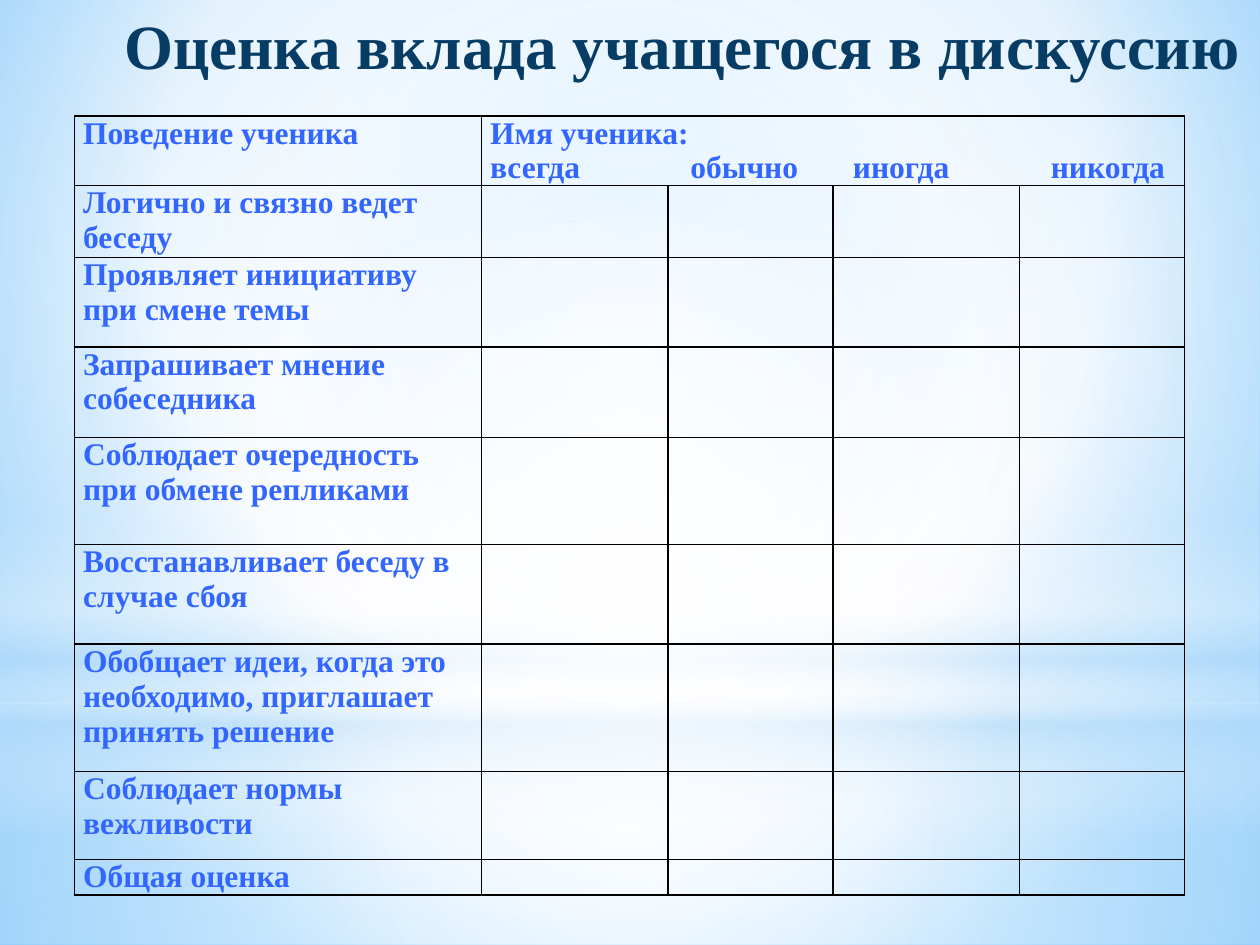
import pptx
import pptx.dml.color
import pptx.enum.shapes
import pptx.enum.text
import pptx.oxml.ns
import pptx.util
from lxml import etree

Inches = pptx.util.Inches
qn = pptx.oxml.ns.qn
MSO_SHAPE = pptx.enum.shapes.MSO_SHAPE
FONT = "Times New Roman"
CENTRE = (50, 50, 50, 50)
COLS = [3.23, 1.48, 1.31, 1.48, 1.31]
ROWS = [0.55, 0.57, 0.71, 0.72, 0.85, 0.79, 1.01, 0.7, 0.28]
RATING_TABS = [1.59, 2.88, 4.45]
RATINGS = ["всегда", "обычно", "иногда", "никогда"]
BEHAVIOURS = [
    "Поведение ученика",
    "Логично и связно ведет беседу",
    "Проявляет инициативу при смене темы",
    "Запрашивает мнение собеседника",
    "Соблюдает очередность при обмене репликами",
    "Восстанавливает беседу в случае сбоя",
    "Обобщает идеи, когда это необходимо, приглашает принять решение",
    "Соблюдает нормы вежливости",
    "Общая оценка",
]


def rgb(color):
    return pptx.dml.color.RGBColor.from_string(color)


def sub(parent, tag, **attrs):
    return etree.SubElement(parent, qn(tag), {k: str(v) for k, v in attrs.items()})


def write(p, text, size=18, color="3366FF", bold=True, align=None):
    p.alignment = align
    r = p.add_run()
    r.text = text
    r.font.name = FONT
    r.font.size = pptx.util.Pt(size)
    r.font.bold = bold
    r.font.color.rgb = rgb(color)


def set_gradient(fill, root, stops, to=None, angle=None):
    fill.gradient()
    grad = root.find(".//" + qn("a:gradFill"))
    for child in list(grad):
        grad.remove(child)
    gs_lst = sub(grad, "a:gsLst")
    for pos, color, opacity in stops:
        gs = sub(gs_lst, "a:gs", pos=pos * 1000)
        clr = sub(gs, "a:srgbClr", val=color)
        if opacity < 100:
            sub(clr, "a:alpha", val=opacity * 1000)
    if to:
        rect = {side: v * 1000 for side, v in zip("ltrb", to)}
        sub(sub(grad, "a:path", path="circle"), "a:fillToRect", **rect)
    else:
        sub(grad, "a:lin", ang=angle * 60000, scaled=0)


def add_glow(s, kind, top, height, stops, **direction):
    sp = s.shapes.add_shape(kind, 0, Inches(top), Inches(10), Inches(height))
    sp.shadow.inherit = False
    sp.line.fill.background()
    set_gradient(sp.fill, sp._element.spPr, stops, **direction)


def add_background(s):
    set_gradient(s.background.fill, s._element,
                 [(0, "9ED5FF", 100), (60, "FFFFFF", 100), (100, "5BB9FF", 100)],
                 to=(20, 10, 20, 60))
    add_glow(s, MSO_SHAPE.RECTANGLE, 5.58, 1.92,
             [(0, "FFFFFF", 91), (37, "FFFFFF", 76), (100, "B4DCFA", 79)], to=CENTRE)
    add_glow(s, MSO_SHAPE.RECTANGLE, 0, 5.58,
             [(0, "FFFFFF", 89), (48, "FFFFFF", 62), (100, "B4DCFA", 79)], to=CENTRE)
    add_glow(s, MSO_SHAPE.RECTANGLE, 4.12, 2.5,
             [(0, "FFFFFF", 0), (29, "FFFFFF", 30), (45, "B4DCFA", 40),
              (55, "FFFFFF", 26), (65, "B4DCFA", 60), (100, "FFFFFF", 0)], angle=90)
    add_glow(s, MSO_SHAPE.OVAL, 1.75, 5.58,
             [(0, "FFFFFF", 100), (56, "FFFFFF", 0)], to=CENTRE)


def add_title(s, text):
    sp = s.shapes.title
    s.shapes._spTree.append(sp._element)
    sp.left, sp.top, sp.width, sp.height = map(Inches, (0.83, 0, 9.17, 1.15))
    tf = sp.text_frame
    tf.vertical_anchor = pptx.enum.text.MSO_ANCHOR.TOP
    write(tf.paragraphs[0], text, size=36, color="073C65",
          align=pptx.enum.text.PP_ALIGN.CENTER)


def format_cell(cell):
    cell.margin_left = cell.margin_right = Inches(0.07)
    cell.margin_top = cell.margin_bottom = 0
    cell.fill.background()
    tc_pr = cell._tc.get_or_add_tcPr()
    for i, tag in enumerate(("a:lnL", "a:lnR", "a:lnT", "a:lnB")):
        ln = sub(tc_pr, tag, w=pptx.util.Pt(1))
        sub(sub(ln, "a:solidFill"), "a:srgbClr", val="000000")
        tc_pr.insert(i, ln)
    sub(cell.text_frame.paragraphs[0]._p, "a:endParaRPr", sz=1200)


def add_ratings(cell):
    tf = cell.text_frame
    write(tf.paragraphs[0], "Имя ученика:")
    p = tf.add_paragraph()
    write(p, "\t".join(RATINGS))
    tabs = sub(p._p.get_or_add_pPr(), "a:tabLst")
    for pos in RATING_TABS:
        sub(tabs, "a:tab", pos=Inches(pos), algn="l")


def add_score_table(s):
    table = s.shapes.add_table(len(ROWS), len(COLS), Inches(0.59), Inches(0.92),
                               Inches(sum(COLS)), Inches(sum(ROWS))).table
    table.first_row = table.horz_banding = False
    for col, width in zip(table.columns, COLS):
        col.width = Inches(width)
    for row, height in zip(table.rows, ROWS):
        row.height = Inches(height)
    for cell in table.iter_cells():
        format_cell(cell)
    for i, text in enumerate(BEHAVIOURS):
        write(table.cell(i, 0).text_frame.paragraphs[0], text)
    table.cell(0, 1).merge(table.cell(0, 4))
    add_ratings(table.cell(0, 1))


def main():
    prs = pptx.Presentation()
    prs.slide_width, prs.slide_height = Inches(10), Inches(7.5)
    s = prs.slides.add_slide(prs.slide_layouts[5])
    add_background(s)
    add_title(s, "Оценка вклада учащегося в дискуссию")
    add_score_table(s)
    prs.save("out.pptx")


if __name__ == "__main__":
    main()
